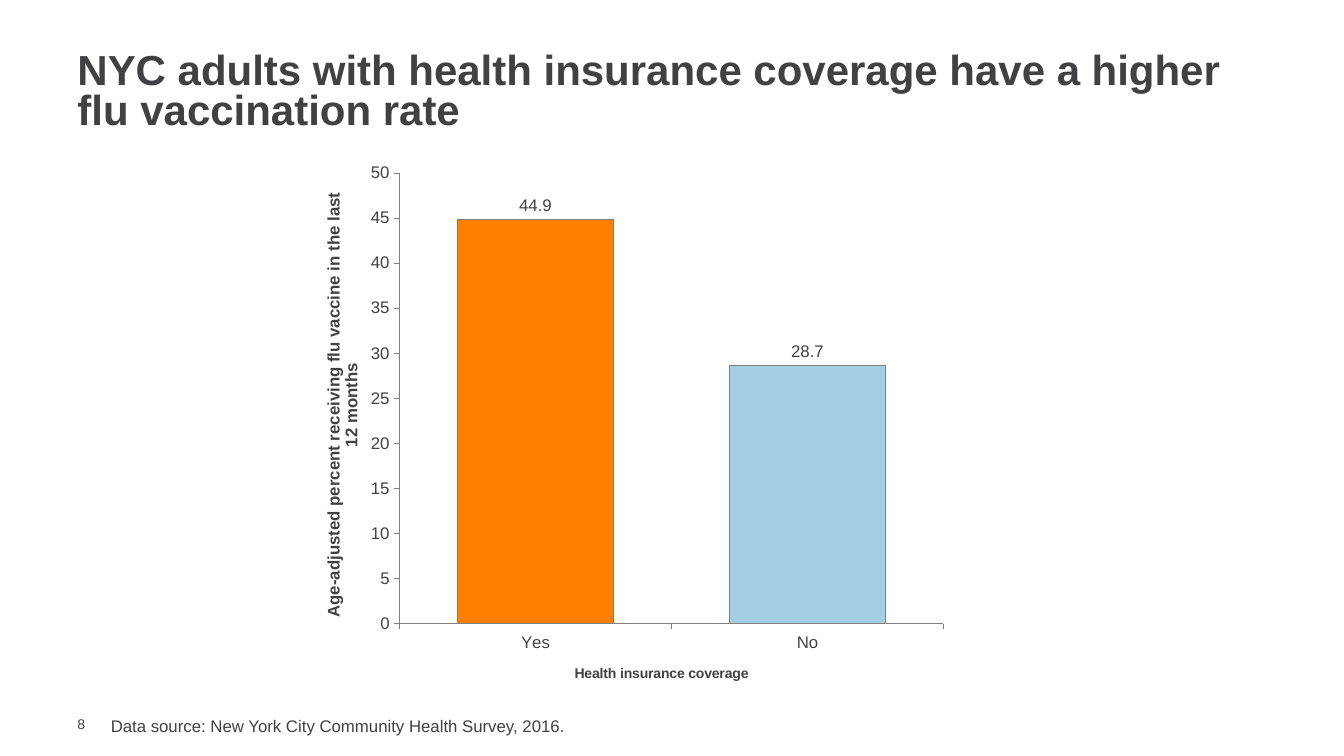
from dataclasses import dataclass

from lxml.etree import SubElement
from pptx import Presentation
from pptx.chart.data import CategoryChartData
from pptx.dml.color import RGBColor
from pptx.enum.chart import XL_CHART_TYPE, XL_LABEL_POSITION, XL_TICK_MARK
from pptx.enum.text import MSO_ANCHOR
from pptx.oxml import parse_xml
from pptx.oxml.ns import nsdecls, qn
from pptx.util import Pt

SCALE = 9144  # EMU per px, 100 px to the inch
FONT = "Arial"
INK = "414042"
GREY = "808080"


@dataclass
class Label:
    text: str
    box: tuple[int, int, int, int]
    size: int
    bold: bool = False
    spacing: float = 1.0
    anchor: MSO_ANCHOR = MSO_ANCHOR.TOP
    insets: tuple[int, int, int, int] = (10, 5, 10, 5)


@dataclass
class Bar:
    name: str
    value: float
    color: str


LABELS = [
    Label("8", (67, 710, 43, 17), 10, anchor=MSO_ANCHOR.MIDDLE, insets=(10, 0, 0, 0)),
    Label("NYC adults with health insurance coverage have a higher flu vaccination rate",
          (67, 47, 1200, 91), 30, bold=True, spacing=0.8, anchor=MSO_ANCHOR.MIDDLE),
    Label("Data source: New York City Community Health Survey, 2016.",
          (100, 705, 992, 30), 12),
]
BARS = [Bar("Yes", 44.9, "FF7F00"), Bar("No", 28.7, "A6CEE3")]
CHART_BOX = (291, 150, 658, 545)


def px(*values: int) -> list[int]:
    return [v * SCALE for v in values]


def rgb(color: str) -> RGBColor:
    return RGBColor.from_string(color)


def set_font(font, size: int, bold: bool = False) -> None:
    font.name = FONT
    font.size = Pt(size)
    font.bold = bold
    font.color.rgb = rgb(INK)


def write(tf, text: str, *, size: int, bold: bool = False, spacing: float = 1.0) -> None:
    p = tf.paragraphs[0]
    p.line_spacing = spacing
    r = p.add_run()
    r.text = text
    set_font(r.font, size, bold)


def add_label(slide, label: Label) -> None:
    tf = slide.shapes.add_textbox(*px(*label.box)).text_frame
    tf.word_wrap = True
    tf.vertical_anchor = label.anchor
    tf.margin_left, tf.margin_top, tf.margin_right, tf.margin_bottom = px(*label.insets)
    write(tf, label.text, size=label.size, bold=label.bold, spacing=label.spacing)


def set_line(line) -> None:
    line.color.rgb = rgb(GREY)
    line.width = Pt(0.75)


def make_layout(**parts):
    """Manual chart layout, in fractions of the chart."""
    layout = parse_xml(f"<c:layout {nsdecls('c')}><c:manualLayout/></c:layout>")
    for tag, value in parts.items():
        SubElement(layout[0], qn(f"c:{tag}"), val=str(value))
    return layout


def drop_layout(element) -> None:
    for old in element.findall(qn("c:layout")):
        element.remove(old)


def style_axis(axis, title: str, size: int, x: float, y: float):
    axis.has_major_gridlines = False
    axis.major_tick_mark = XL_TICK_MARK.OUTSIDE
    axis.minor_tick_mark = XL_TICK_MARK.NONE
    set_font(axis.tick_labels.font, 12)
    set_line(axis.format.line)
    tf = axis.axis_title.text_frame
    write(tf, title, size=size, bold=True)
    element = axis.axis_title._element
    drop_layout(element)
    element.find(qn("c:tx")).addnext(make_layout(xMode="edge", yMode="edge", x=x, y=y))
    return tf


def add_bar_chart(slide) -> None:
    data = CategoryChartData()
    data.categories = [bar.name for bar in BARS]
    data.add_series("Series 1", [bar.value for bar in BARS])
    chart = slide.shapes.add_chart(
        XL_CHART_TYPE.COLUMN_CLUSTERED, *px(*CHART_BOX), data).chart
    chart.has_legend = False
    chart.has_title = False
    set_font(chart.font, 10)

    # Plot area
    area = chart._chartSpace.chart.plotArea
    drop_layout(area)
    area.insert(0, make_layout(layoutTarget="inner", xMode="edge", yMode="edge",
                               x=0.16, y=0.04, w=0.82, h=0.82))

    # Axes
    style_axis(chart.category_axis, "Health insurance coverage", 10, 0.42, 0.93)
    axis = chart.value_axis
    axis.minimum_scale, axis.maximum_scale, axis.major_unit = 0, 50, 5
    tf = style_axis(axis, "Age-adjusted percent receiving flu vaccine in the last 12 months",
                    12, 0.04, 0.07)
    body = tf._txBody.find(qn("a:bodyPr"))
    body.set("rot", "-5400000")
    body.set("vert", "horz")

    # Bars and their values
    plot = chart.plots[0]
    plot.gap_width = 75
    plot.vary_by_categories = False
    plot.has_data_labels = True
    labels = plot.data_labels
    labels.show_value = True
    labels.position = XL_LABEL_POSITION.OUTSIDE_END
    set_font(labels.font, 12)
    for i, bar in enumerate(BARS):
        fmt = plot.series[0].points[i].format
        fmt.fill.solid()
        fmt.fill.fore_color.rgb = rgb(bar.color)
        set_line(fmt.line)


def main() -> None:
    prs = Presentation()
    prs.slide_width, prs.slide_height = px(1333, 750)
    slide = prs.slides.add_slide(prs.slide_layouts[6])
    for label in LABELS:
        add_label(slide, label)
    add_bar_chart(slide)
    prs.save("out.pptx")


if __name__ == "__main__":
    main()
